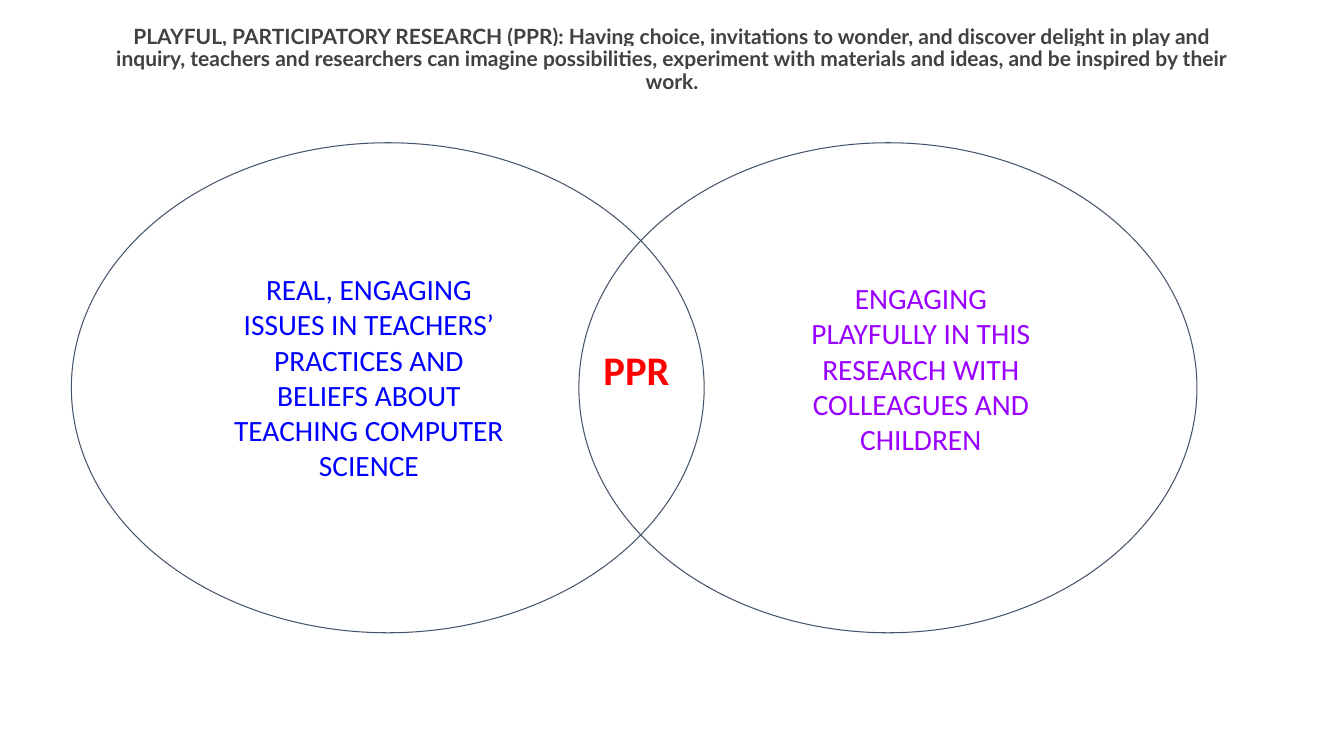
from dataclasses import dataclass

from lxml import etree
from pptx import Presentation
from pptx.dml.color import RGBColor
from pptx.enum import shapes, text
from pptx.oxml import ns
from pptx.slide import Slide
from pptx.text.text import TextFrame
from pptx.util import Pt

WHITE = RGBColor(0xFF, 0xFF, 0xFF)
CHARCOAL = RGBColor(0x41, 0x40, 0x42)
SLATE = RGBColor(0x44, 0x54, 0x6A)
BLUE = RGBColor(0x00, 0x00, 0xFF)
PURPLE = RGBColor(0x99, 0x00, 0xFF)
RED = RGBColor(0xFF, 0x00, 0x00)

TITLE = (
    "PLAYFUL, PARTICIPATORY RESEARCH (PPR): Having choice, invitations to wonder, "
    "and discover delight in play and inquiry, teachers and researchers can imagine "
    "possibilities, experiment with materials and ideas, and be inspired by their work."
)
CIRCLE_TOP, CIRCLE_HEIGHT = 102, 350


@dataclass(frozen=True)
class Circle:
    left: float
    width: float


@dataclass(frozen=True)
class Label:
    wording: str
    left: float
    top: float
    width: float
    height: float
    color: RGBColor
    size: float = 21
    bold: bool = False
    alignment: text.PP_ALIGN = text.PP_ALIGN.CENTER


CIRCLES = (Circle(51, 452), Circle(413.5, 441.5))
LABELS = (
    Label(
        "REAL, ENGAGING ISSUES IN TEACHERS’ PRACTICES AND BELIEFS ABOUT "
        "TEACHING COMPUTER SCIENCE",
        155.5, 186.5, 216, 167, BLUE,
    ),
    Label(
        "ENGAGING PLAYFULLY IN THIS RESEARCH WITH COLLEAGUES AND CHILDREN",
        561.5, 193, 192.5, 142, PURPLE,
    ),
    Label("PPR", 424, 239, 64, 49.5, RED, 29, True, text.PP_ALIGN.LEFT),
)


def write(frame: TextFrame, wording: str, font_name: str, size: float,
          color: RGBColor, bold: bool, alignment: text.PP_ALIGN, inset: float):
    """Fill a frame with one formatted run and return that run."""
    frame.word_wrap = True
    frame.vertical_anchor = text.MSO_ANCHOR.TOP
    frame.margin_left = frame.margin_right = Pt(7.2)
    frame.margin_top = frame.margin_bottom = Pt(inset)
    paragraph = frame.paragraphs[0]
    paragraph.alignment = alignment
    run = paragraph.add_run()
    run.text = wording
    run.font.name = font_name
    run.font.size = Pt(size)
    run.font.bold = bold
    run.font.color.rgb = color
    return run


def add_title(slide: Slide) -> None:
    title = slide.shapes.title
    title.left, title.top, title.width, title.height = Pt(66), Pt(15), Pt(828), Pt(60)
    frame = title.text_frame
    frame.auto_size = text.MSO_AUTO_SIZE.NONE
    run = write(frame, TITLE, "Lato", 15, CHARCOAL, True, text.PP_ALIGN.CENTER, 3.6)
    frame.paragraphs[0].line_spacing = 0.9
    frame.paragraphs[0].space_before = Pt(10)
    highlight = etree.Element(ns.qn("a:highlight"))
    etree.SubElement(highlight, ns.qn("a:srgbClr"), val=str(WHITE))
    run.font._element.find(ns.qn("a:solidFill")).addnext(highlight)


def add_circle(slide: Slide, circle: Circle) -> None:
    shape = slide.shapes.add_shape(
        shapes.MSO_SHAPE.OVAL, Pt(circle.left), Pt(CIRCLE_TOP),
        Pt(circle.width), Pt(CIRCLE_HEIGHT),
    )
    shape.shadow.inherit = False
    shape.fill.background()
    shape.line.color.rgb = SLATE
    shape.line.width = Pt(0.75)


def add_label(slide: Slide, label: Label) -> None:
    box = slide.shapes.add_textbox(
        Pt(label.left), Pt(label.top), Pt(label.width), Pt(label.height)
    )
    box.text_frame.auto_size = text.MSO_AUTO_SIZE.SHAPE_TO_FIT_TEXT
    write(box.text_frame, label.wording, "Calibri", label.size, label.color,
          label.bold, label.alignment, 7.2)


def main() -> None:
    presentation = Presentation()
    presentation.slide_width, presentation.slide_height = Pt(960), Pt(540)
    slide = presentation.slides.add_slide(presentation.slide_layouts[5])
    slide.background.fill.solid()
    slide.background.fill.fore_color.rgb = WHITE
    add_title(slide)
    for circle in CIRCLES:
        add_circle(slide, circle)
    for label in LABELS:
        add_label(slide, label)
    presentation.save("out.pptx")


if __name__ == "__main__":
    main()
